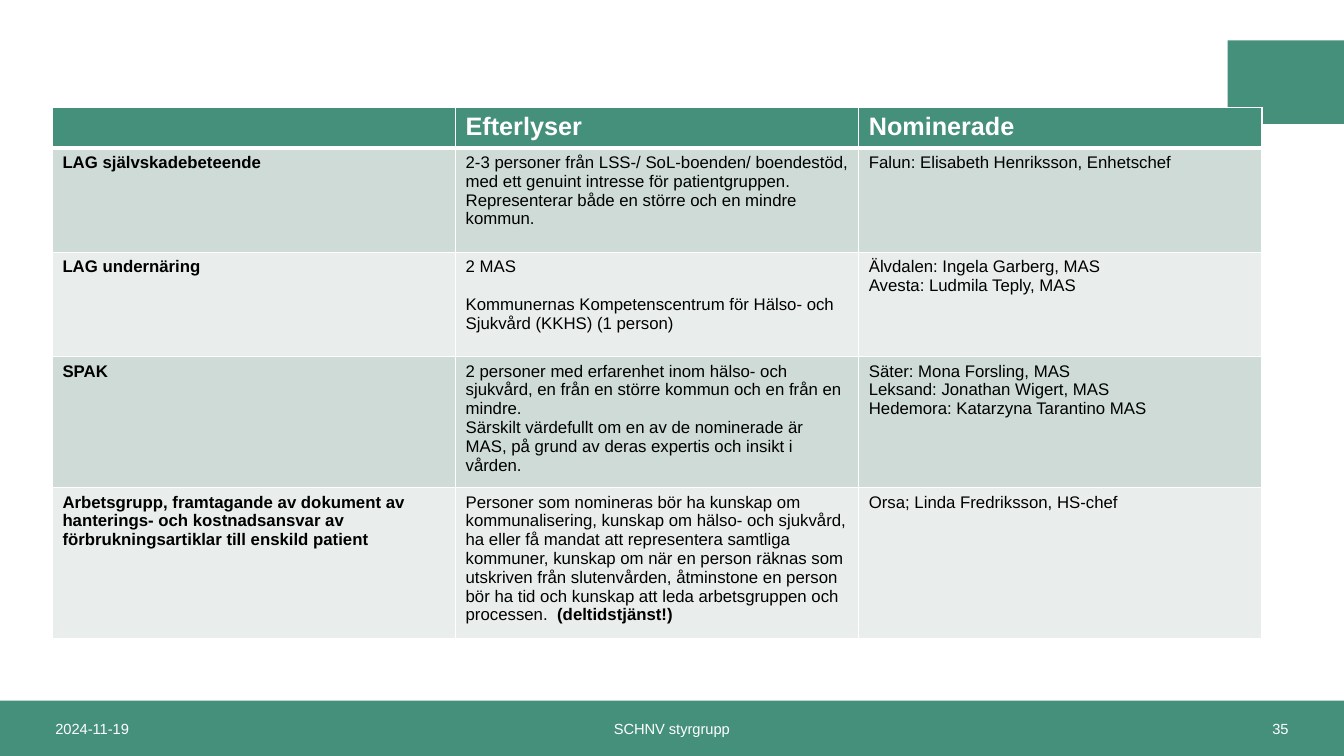
from dataclasses import dataclass

from lxml import etree
from pptx import Presentation
from pptx.dml.color import RGBColor
from pptx.enum.shapes import MSO_SHAPE
from pptx.enum.text import MSO_ANCHOR, PP_ALIGN
from pptx.oxml.ns import qn
from pptx.util import Inches, Pt

RECTANGLE = MSO_SHAPE.RECTANGLE
MIDDLE = MSO_ANCHOR.MIDDLE
LEFT, CENTER, RIGHT = PP_ALIGN.LEFT, PP_ALIGN.CENTER, PP_ALIGN.RIGHT

SLIDE_WIDTH, SLIDE_HEIGHT = Inches(13.333), Inches(7.5)


@dataclass(frozen=True)
class Theme:
    font: str = "Arial"
    green: str = "45907A"
    bands: tuple = ("CFDBD7", "E9EEEC")
    white: str = "FFFFFF"
    black: str = "000000"
    heading_size: float = 18
    body_size: float = 12
    footer_size: float = 10.5
    thin_line: float = 1
    thick_line: float = 3


THEME = Theme()


@dataclass(frozen=True)
class Area:
    """Place and size in percent of the slide's width and height."""
    left: float
    top: float
    width: float
    height: float

    def lengths(self) -> tuple:
        return across(self.left), down(self.top), across(self.width), down(self.height)


@dataclass(frozen=True)
class Span:
    text: str
    bold: bool = False


@dataclass(frozen=True)
class Para:
    spans: tuple
    space_before: float = 0


@dataclass(frozen=True)
class Style:
    size: float
    color: str


@dataclass(frozen=True)
class FooterField:
    text: str
    left: float
    width: float
    align: PP_ALIGN


@dataclass(frozen=True)
class GroupRow:
    height: float
    name: str
    wanted: tuple
    nominated: tuple


def plain(text: str, space_before: float = 0) -> Para:
    return Para((Span(text),), space_before)


def strong(text: str) -> Para:
    return Para((Span(text, bold=True),))


FOOTER_TOP, FOOTER_HEIGHT = 92.67, 7.33
BLOCKS = (
    Area(91.35, 5.33, 8.65, 11.07),
    Area(0, FOOTER_TOP, 100, FOOTER_HEIGHT),
)
FOOTER = (
    FooterField("2024-11-19", 3.38, 26, LEFT),
    FooterField("SCHNV styrgrupp", 33.12, 33.75, CENTER),
    FooterField("35", 70.62, 26, RIGHT),
)
TABLE_LEFT, TABLE_TOP, COLUMN_WIDTH, HEADER_HEIGHT = 3.9, 14.2, 30, 5.4
HEADINGS = ("", "Efterlyser", "Nominerade")
GROUPS = (
    GroupRow(
        13.8, "LAG självskadebeteende",
        (plain("2-3 personer från LSS-/ SoL-boenden/ boendestöd, med ett genuint "
               "intresse för patientgruppen."),
         plain("Representerar både en större och en mindre kommun.")),
        (plain("Falun: Elisabeth Henriksson, Enhetschef"),)),
    GroupRow(
        13.8, "LAG undernäring",
        (plain("2 MAS"),
         plain("Kommunernas Kompetenscentrum för Hälso- och Sjukvård (KKHS) (1 person)",
               space_before=13.5)),
        (plain("Älvdalen: Ingela Garberg, MAS"), plain("Avesta: Ludmila Teply, MAS"))),
    GroupRow(
        16.3, "SPAK",
        (plain("2 personer med erfarenhet inom hälso- och sjukvård, en från en större "
               "kommun och en från en mindre."),
         plain("Särskilt värdefullt om en av de nominerade är MAS, på grund av deras "
               "expertis och insikt i vården.")),
        (plain("Säter: Mona Forsling, MAS"), plain("Leksand: Jonathan Wigert, MAS"),
         plain("Hedemora: Katarzyna Tarantino MAS"))),
    GroupRow(
        18.9, "Arbetsgrupp, framtagande av dokument av hanterings- och kostnadsansvar "
              "av förbrukningsartiklar till enskild patient",
        (Para((Span("Personer som nomineras bör ha kunskap om kommunalisering, kunskap om "
                    "hälso- och sjukvård, ha eller få mandat att representera samtliga "
                    "kommuner, kunskap om när en person räknas som utskriven från "
                    "slutenvården, åtminstone en person bör ha tid och kunskap att leda "
                    "arbetsgruppen och processen.  "),
               Span("(deltidstjänst!)", bold=True))),),
        (plain("Orsa; Linda Fredriksson, HS-chef"),)),
)


def across(percent: float) -> int:
    return round(SLIDE_WIDTH * percent / 100)


def down(percent: float) -> int:
    return round(SLIDE_HEIGHT * percent / 100)


def write(frame, paras: tuple, style: Style, align: PP_ALIGN = LEFT) -> None:
    for index, para in enumerate(paras):
        paragraph = frame.add_paragraph() if index else frame.paragraphs[0]
        paragraph.alignment = align
        paragraph.space_before = Pt(para.space_before)
        for span in para.spans:
            run = paragraph.add_run()
            run.text = span.text
            run.font.name = THEME.font
            run.font.size = Pt(style.size)
            run.font.bold = span.bold
            run.font.color.rgb = RGBColor.from_string(style.color)


def add_block(page, area: Area) -> None:
    block = page.shapes.add_shape(RECTANGLE, *area.lengths())
    block.shadow.inherit = False
    block.fill.solid()
    block.fill.fore_color.rgb = RGBColor.from_string(THEME.green)
    block.line.fill.background()


def add_footer_field(page, field: FooterField) -> None:
    area = Area(field.left, FOOTER_TOP, field.width, FOOTER_HEIGHT)
    frame = page.shapes.add_textbox(*area.lengths()).text_frame
    frame.word_wrap = True
    frame.vertical_anchor = MIDDLE
    write(frame, (plain(field.text),), Style(THEME.footer_size, THEME.white), field.align)


def set_borders(cell, top: float, bottom: float) -> None:
    """Draw white lines around a cell, ahead of its fill as the schema asks."""
    properties = cell._tc.get_or_add_tcPr()
    widths = {"a:lnL": THEME.thin_line, "a:lnR": THEME.thin_line, "a:lnT": top, "a:lnB": bottom}
    for position, (tag, width) in enumerate(widths.items()):
        line = etree.Element(qn(tag), w=str(Pt(width)))
        fill = etree.SubElement(line, qn("a:solidFill"))
        etree.SubElement(fill, qn("a:srgbClr"), val=THEME.white)
        properties.insert(position, line)


def add_nominations(page) -> None:
    heights = (HEADER_HEIGHT, *(group.height for group in GROUPS))
    area = Area(TABLE_LEFT, TABLE_TOP, COLUMN_WIDTH * len(HEADINGS), sum(heights))
    table = page.shapes.add_table(len(heights), len(HEADINGS), *area.lengths()).table
    for column in table.columns:
        column.width = across(COLUMN_WIDTH)

    contents = [tuple((strong(heading),) if heading else () for heading in HEADINGS)]
    contents += [((strong(group.name),), group.wanted, group.nominated) for group in GROUPS]
    heading_style = Style(THEME.heading_size, THEME.white)
    body_style = Style(THEME.body_size, THEME.black)
    for index, (height, texts) in enumerate(zip(heights, contents)):
        table.rows[index].height = down(height)
        color = THEME.bands[(index - 1) % 2] if index else THEME.green
        top = THEME.thick_line if index == 1 else THEME.thin_line
        bottom = THEME.thin_line if index else THEME.thick_line
        for cell, paras in zip(table.rows[index].cells, texts):
            cell.fill.solid()
            cell.fill.fore_color.rgb = RGBColor.from_string(color)
            set_borders(cell, top, bottom)
            write(cell.text_frame, paras, body_style if index else heading_style)


def main() -> None:
    deck = Presentation()
    deck.slide_width, deck.slide_height = SLIDE_WIDTH, SLIDE_HEIGHT
    page = deck.slides.add_slide(deck.slide_layouts[6])
    for area in BLOCKS:
        add_block(page, area)
    for field in FOOTER:
        add_footer_field(page, field)
    add_nominations(page)
    deck.save("out.pptx")


if __name__ == "__main__":
    main()
